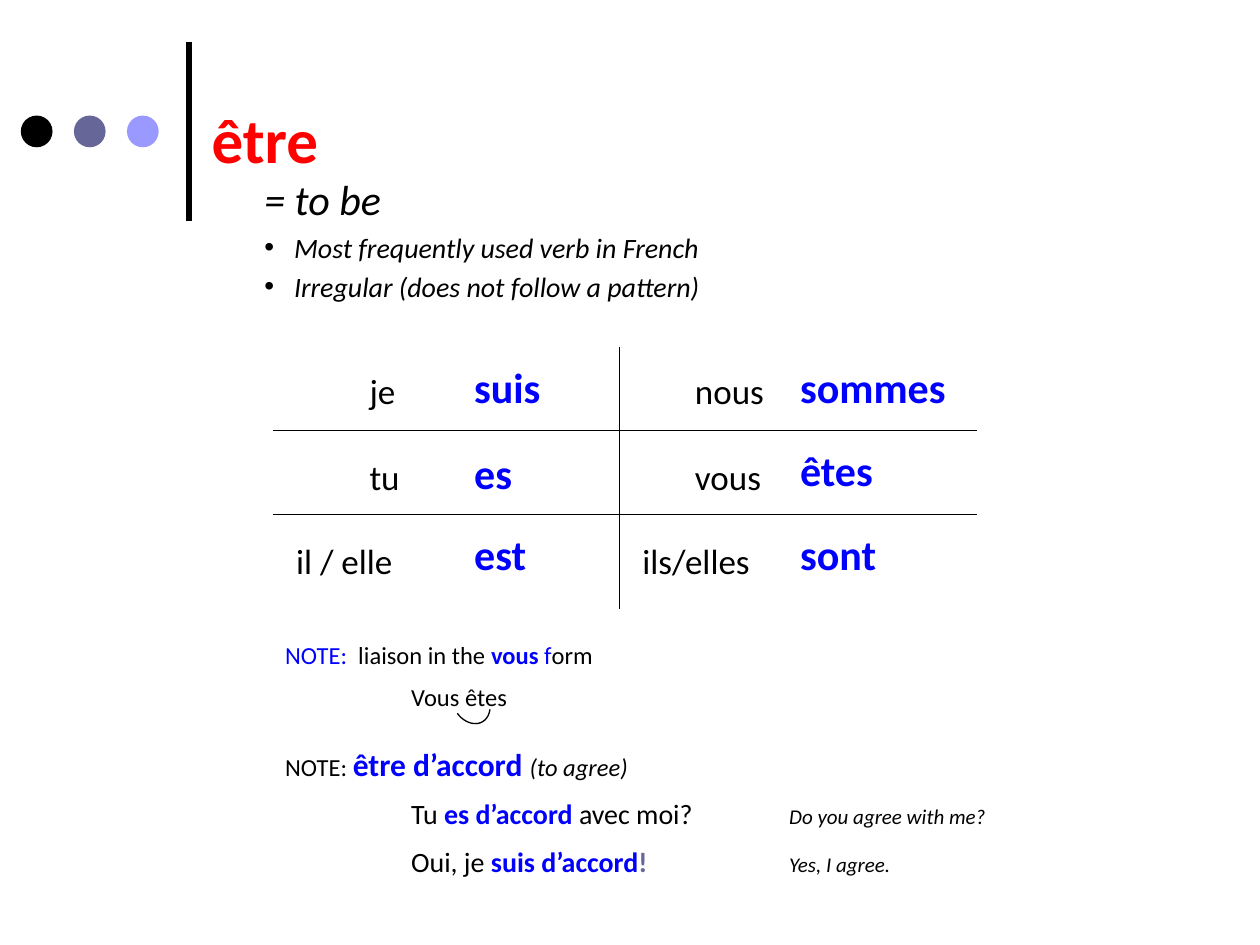
from dataclasses import dataclass

from lxml import etree
from pptx import Presentation
from pptx.dml.color import RGBColor
from pptx.enum import shapes, text
from pptx.oxml.ns import qn
from pptx.util import Cm, Pt


@dataclass(frozen=True)
class Theme:
    font: str = "Calibri"
    black: str = "000000"
    red: str = "FF0000"
    blue: str = "0000FF"
    slate: str = "666699"
    lilac: str = "9999FF"
    title: int = 36
    verb: int = 24
    pronoun: int = 20
    phrase: int = 18
    body: int = 16
    note: int = 14
    translation: int = 12


THEME = Theme()
EXAMPLE_TAB, TRANSLATION_TAB = 2.54, 10.16


@dataclass(frozen=True)
class Span:
    text: str
    size: int
    color: str = THEME.black
    bold: bool = False
    italic: bool = False


@dataclass(frozen=True)
class Line:
    spans: tuple[Span, ...]
    before: float = 0
    bullet: bool = False
    tabs: tuple[float, ...] = ()


@dataclass(frozen=True)
class Conjugation:
    pronoun: str
    pronoun_left: float
    pronoun_top: float
    verb: str
    verb_left: float
    verb_top: float


CONJUGATIONS = (
    Conjugation("je", 7.2, 7.32, "suis", 9.31, 7.16),
    Conjugation("tu", 7.2, 9.06, "es", 9.31, 8.89),
    Conjugation("il / elle", 5.72, 10.75, "est", 9.31, 10.53),
    Conjugation("nous", 13.76, 7.32, "sommes", 15.88, 7.16),
    Conjugation("vous", 13.76, 9.06, "êtes", 15.88, 8.84),
    Conjugation("ils/elles", 12.7, 10.75, "sont", 15.88, 10.53),
)

MEANING = (
    Line((Span("= to be", THEME.verb, italic=True),)),
    Line((Span("Most frequently used verb in French", THEME.body, italic=True),), 8, True),
    Line((Span("Irregular (does not follow a pattern)", THEME.body, italic=True),), 8, True),
)

LIAISON_NOTE = (
    Line((
        Span("NOTE:", THEME.note, THEME.blue),
        Span("  liaison in the ", THEME.note),
        Span("vous", THEME.note, THEME.blue, bold=True),
        Span(" f", THEME.note, THEME.blue),
        Span("orm", THEME.note),
    )),
    Line((Span("\tVous êtes", THEME.note),), 7, tabs=(EXAMPLE_TAB,)),
)

AGREEMENT_NOTE = (
    Line((
        Span("NOTE: ", THEME.note),
        Span("être d’accord ", THEME.phrase, THEME.blue, bold=True),
        Span("(to agree)", THEME.note, italic=True),
    )),
    Line((
        Span("\tTu ", THEME.body),
        Span("es d’accord ", THEME.body, THEME.blue, bold=True),
        Span("avec moi?\t", THEME.body),
        Span("Do you agree with me?", THEME.translation, italic=True),
    ), 8, tabs=(EXAMPLE_TAB, TRANSLATION_TAB)),
    Line((
        Span("\tOui, je ", THEME.body),
        Span("suis d’accord", THEME.body, THEME.blue, bold=True),
        Span("!\t", THEME.body, THEME.slate, bold=True),
        Span("Yes, I agree.", THEME.translation, italic=True),
    ), 8, tabs=(EXAMPLE_TAB, TRANSLATION_TAB)),
)


def add_bullet(paragraph) -> None:
    properties = paragraph._p.get_or_add_pPr()
    properties.set("marL", str(Cm(0.6)))
    properties.set("indent", str(-Cm(0.6)))
    etree.SubElement(properties, qn("a:buFont")).set("typeface", "Arial")
    etree.SubElement(properties, qn("a:buChar")).set("char", "•")


def add_tab_stops(paragraph, positions: tuple[float, ...]) -> None:
    stops = etree.SubElement(paragraph._p.get_or_add_pPr(), qn("a:tabLst"))
    for position in positions:
        etree.SubElement(stops, qn("a:tab"), pos=str(Cm(position)), algn="l")


def write(frame, lines: tuple[Line, ...]) -> None:
    frame.word_wrap = True
    frame.auto_size = text.MSO_AUTO_SIZE.NONE
    frame.vertical_anchor = text.MSO_ANCHOR.TOP
    for index, line in enumerate(lines):
        paragraph = frame.add_paragraph() if index else frame.paragraphs[0]
        paragraph.alignment = text.PP_ALIGN.LEFT
        paragraph.space_before = Pt(line.before)
        if line.bullet:
            paragraph.line_spacing = 0.75
            add_bullet(paragraph)
        if line.tabs:
            add_tab_stops(paragraph, line.tabs)
        for span in line.spans:
            run = paragraph.add_run()
            run.text = span.text
            font = run.font
            font.name, font.size = THEME.font, Pt(span.size)
            font.bold, font.italic = span.bold, span.italic
            font.color.rgb = RGBColor.from_string(span.color)


def add_text(slide, left: float, top: float, width: float, height: float,
             lines: tuple[Line, ...]) -> None:
    box = slide.shapes.add_textbox(Cm(left), Cm(top), Cm(width), Cm(height))
    write(box.text_frame, lines)


def add_rule(slide, x1: float, y1: float, x2: float, y2: float, weight: float) -> None:
    rule = slide.shapes.add_connector(
        shapes.MSO_CONNECTOR.STRAIGHT, Cm(x1), Cm(y1), Cm(x2), Cm(y2))
    rule.line.width = Pt(weight)
    rule.line.color.rgb = RGBColor.from_string(THEME.black)
    etree.SubElement(rule._element.spPr, qn("a:effectLst"))


def add_dot(slide, left: float, color: str) -> None:
    dot = slide.shapes.add_shape(
        shapes.MSO_SHAPE.OVAL, Cm(left), Cm(2.33), Cm(0.64), Cm(0.64))
    dot.shadow.inherit = False
    dot.fill.solid()
    dot.fill.fore_color.rgb = RGBColor.from_string(color)
    dot.line.fill.background()


def add_liaison_curve(slide) -> None:
    """Draw the tie under "Vous êtes" as a sampled cubic curve."""
    controls = ((9.22, 14.38), (9.42, 14.66), (9.82, 14.68), (9.88, 14.3))
    steps = 16
    points = []
    for step in range(steps + 1):
        t = step / steps
        weights = ((1 - t) ** 3, 3 * t * (1 - t) ** 2, 3 * t * t * (1 - t), t ** 3)
        points.append(tuple(
            Cm(sum(w * point[axis] for w, point in zip(weights, controls)))
            for axis in (0, 1)))
    builder = slide.shapes.build_freeform(*points[0])
    builder.add_line_segments(points[1:], close=False)
    curve = builder.convert_to_shape()
    curve.shadow.inherit = False
    curve.fill.background()
    curve.line.width = Pt(0.75)
    curve.line.color.rgb = RGBColor.from_string(THEME.black)


def main() -> None:
    deck = Presentation()
    deck.slide_width, deck.slide_height = Cm(25.4), Cm(19.05)
    slide = deck.slides.add_slide(deck.slide_layouts[5])

    add_rule(slide, 3.81, 0.84, 3.81, 4.45, 3)
    for index, color in enumerate((THEME.black, THEME.slate, THEME.lilac)):
        add_dot(slide, 0.42 + 1.07 * index, color)

    title = slide.shapes.title
    title.left, title.top, title.width, title.height = Cm(4.01), Cm(1.9), Cm(15.88), Cm(1.8)
    write(title.text_frame, (Line((Span("être", THEME.title, THEME.red, bold=True),)),))
    add_text(slide, 5.08, 3.38, 15.88, 3.02, MEANING)

    for y in (8.68, 10.37):
        add_rule(slide, 5.5, y, 19.69, y, 0.75)
    add_rule(slide, 12.49, 6.99, 12.49, 12.28, 0.75)
    for form in CONJUGATIONS:
        add_text(slide, form.pronoun_left, form.pronoun_top, 3.2, 1.1,
                 (Line((Span(form.pronoun, THEME.pronoun),)),))
        add_text(slide, form.verb_left, form.verb_top, 3.81, 1.28,
                 (Line((Span(form.verb, THEME.verb, THEME.blue, bold=True),)),))

    add_text(slide, 5.5, 12.78, 16.51, 1.75, LIAISON_NOTE)
    add_liaison_curve(slide)
    add_text(slide, 5.5, 14.89, 19.05, 3.94, AGREEMENT_NOTE)
    deck.save("out.pptx")


if __name__ == "__main__":
    main()
